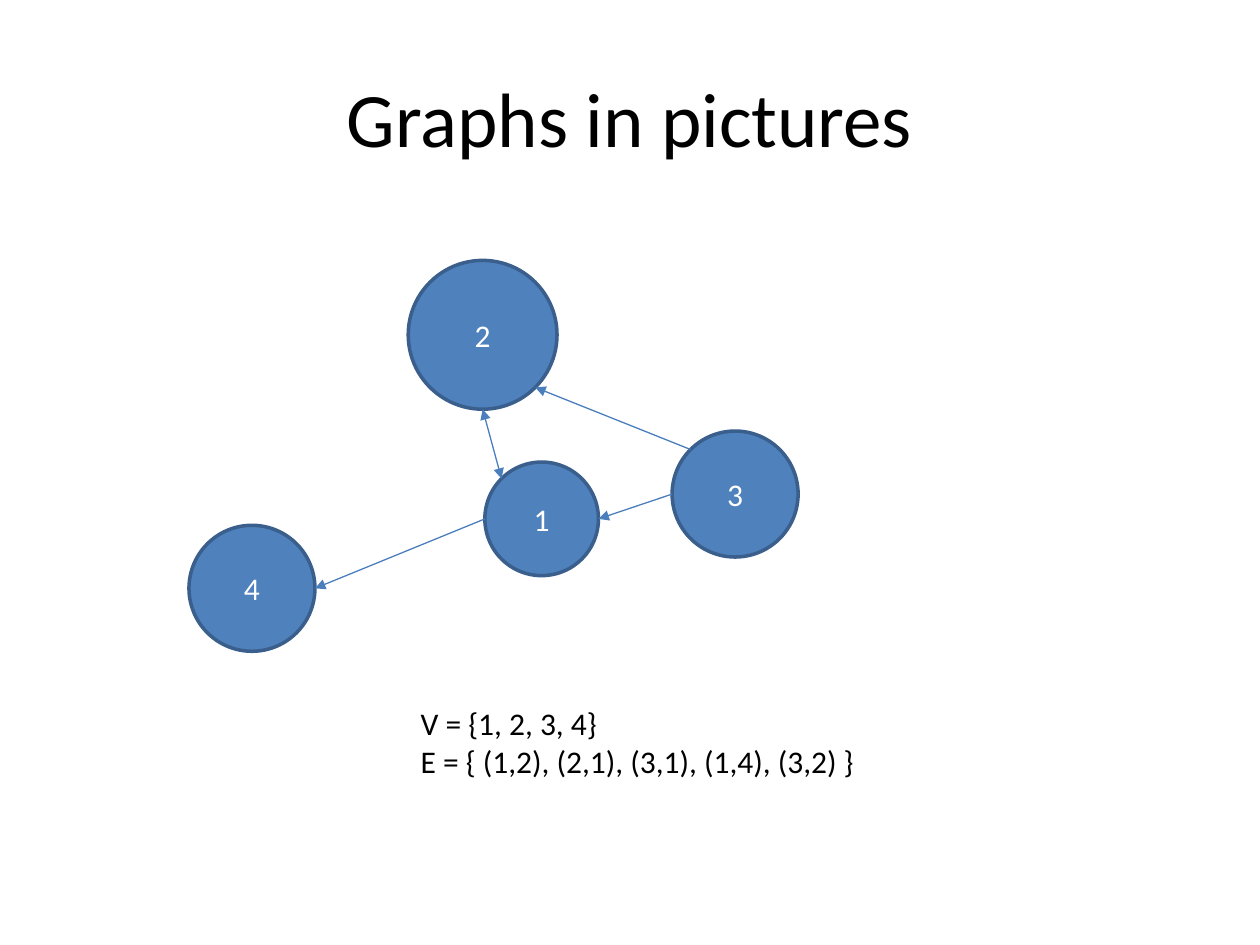
import math

from lxml import etree
from pptx import Presentation
from pptx import util as u
from pptx.dml.color import RGBColor
from pptx.enum import shapes, text
from pptx.oxml.ns import qn

BLACK = RGBColor(0x00, 0x00, 0x00)
WHITE = RGBColor(0xFF, 0xFF, 0xFF)
NODE_FILL = RGBColor(0x4F, 0x81, 0xBD)
NODE_LINE = RGBColor(0x3A, 0x5F, 0x8C)
EDGE_LINE = RGBColor(0x4B, 0x7E, 0xBC)

# label: centre x, centre y, diameter in cm
NODES = {
    "2": (9.73, 6.75, 3.0),
    "4": (5.08, 11.86, 2.54),
    "3": (14.82, 9.96, 2.54),
    "1": (10.92, 10.46, 2.29),
}
ANGLES = {"E": 0, "SE": 45, "S": 90, "W": 180, "NW": 225}
EDGES = [
    ("2", "SE", "3", "NW", ["headEnd"]),
    ("2", "S", "1", "NW", ["headEnd", "tailEnd"]),
    ("1", "E", "3", "W", ["headEnd"]),
    ("4", "E", "1", "W", ["headEnd"]),
]


def write(tf, lines, size, color, align, anchor):
    tf.vertical_anchor = anchor
    for i, line in enumerate(lines):
        p = tf.paragraphs[0] if i == 0 else tf.add_paragraph()
        p.alignment = align
        r = p.add_run()
        r.text = line
        r.font.color.rgb = color
        for name, value in {"name": "Calibri", "size": u.Pt(size)}.items():
            setattr(r.font, name, value)


def add_text(s, box, lines, size, align, anchor, frame):
    sp = s.shapes.add_textbox(*map(u.Cm, box))
    for name, value in frame.items():
        setattr(sp.text_frame, name, value)
    write(sp.text_frame, lines, size, BLACK, align, anchor)


def add_node(s, label):
    x, y, d = NODES[label]
    box = (x - d / 2, y - d / 2, d, d)
    sp = s.shapes.add_shape(shapes.MSO_SHAPE.OVAL, *map(u.Cm, box))
    sp.shadow.inherit = False
    sp.fill.solid()
    sp.fill.fore_color.rgb = NODE_FILL
    sp.line.color.rgb = NODE_LINE
    sp.line.width = u.Pt(2)
    write(sp.text_frame, [label], 18, WHITE,
          text.PP_ALIGN.CENTER, text.MSO_ANCHOR.MIDDLE)


def rim(label, side):
    x, y, d = NODES[label]
    a = math.radians(ANGLES[side])
    return u.Cm(x + d / 2 * math.cos(a)), u.Cm(y + d / 2 * math.sin(a))


def add_edge(s, start, start_side, end, end_side, arrows):
    cx = s.shapes.add_connector(shapes.MSO_CONNECTOR.STRAIGHT,
                                *rim(start, start_side), *rim(end, end_side))
    cx.line.color.rgb = EDGE_LINE
    cx.line.width = u.Pt(0.75)
    sp_pr = cx._element.spPr
    ln = sp_pr.find(qn("a:ln"))
    for arrow in arrows:
        etree.SubElement(ln, qn("a:" + arrow), type="triangle")
    etree.SubElement(sp_pr, qn("a:effectLst"))


def main():
    prs = Presentation()
    prs.slide_width, prs.slide_height = u.Cm(25.4), u.Cm(19.05)
    s = prs.slides.add_slide(prs.slide_layouts[6])
    add_text(s, (1.27, 0.76, 22.86, 3.18), ["Graphs in pictures"], 44,
             text.PP_ALIGN.CENTER, text.MSO_ANCHOR.MIDDLE, {"word_wrap": True})
    for label in NODES:
        add_node(s, label)
    for edge in EDGES:
        add_edge(s, *edge)
    add_text(s, (8.23, 14.07, 9.42, 1.8),
             ["V = {1, 2, 3, 4}", "E = { (1,2), (2,1), (3,1), (1,4), (3,2) }"],
             18, text.PP_ALIGN.LEFT, text.MSO_ANCHOR.TOP,
             {"word_wrap": False,
              "auto_size": text.MSO_AUTO_SIZE.SHAPE_TO_FIT_TEXT})
    prs.save("out.pptx")


if __name__ == "__main__":
    main()
